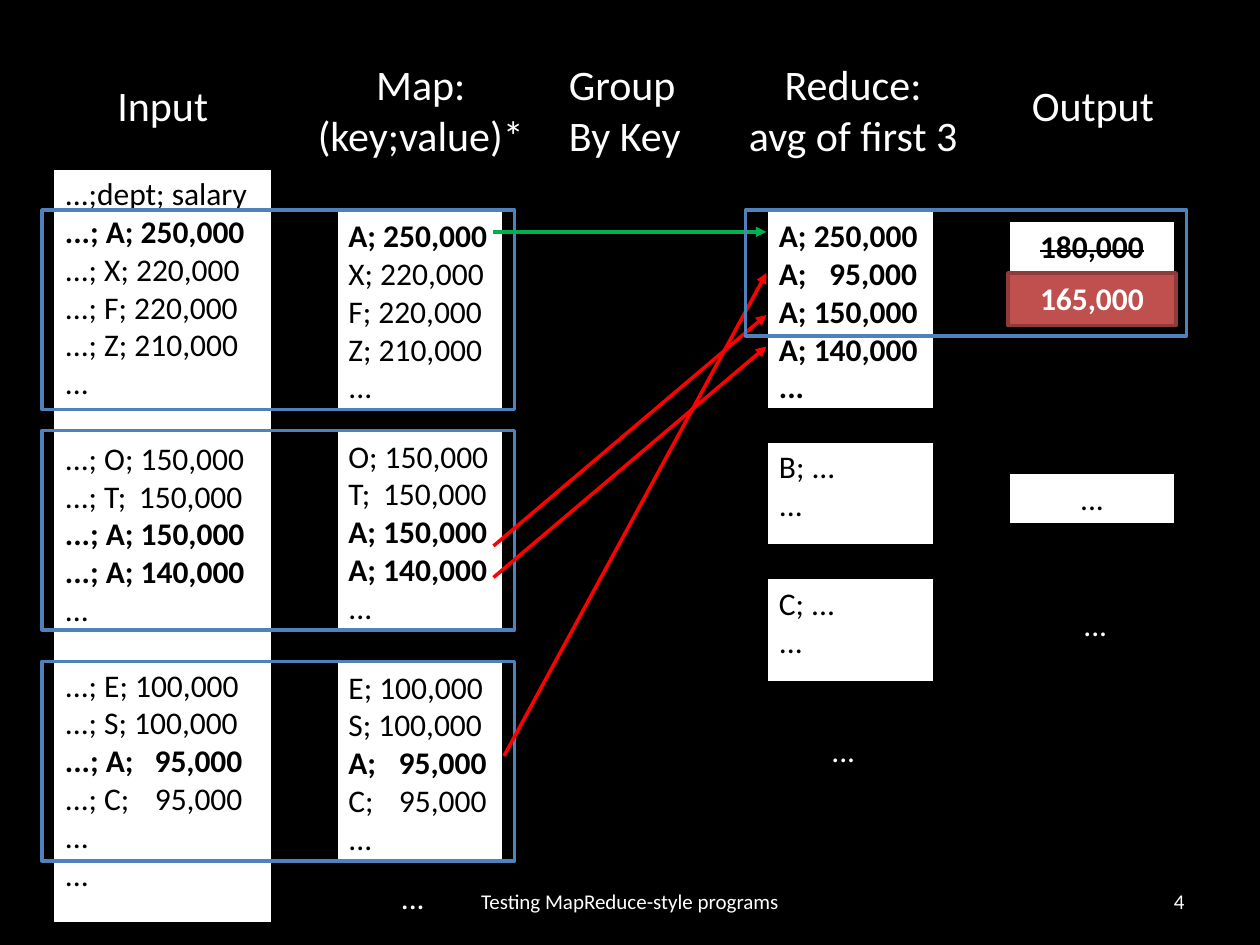
from lxml.etree import SubElement
from pptx import Presentation
from pptx.dml.color import RGBColor
from pptx.enum.shapes import MSO_CONNECTOR, MSO_SHAPE
from pptx.enum.text import MSO_ANCHOR, MSO_AUTO_SIZE, PP_ALIGN
from pptx.oxml.ns import qn
from pptx.util import Pt

COLORS = {
    "black": "000000", "white": "FFFFFF", "frame": "4F81BD",
    "kept": "00B050", "moved": "FF0000", "changed": "C0504D", "changed_edge": "8E3B39",
}
LEFT, CENTER, RIGHT = PP_ALIGN.LEFT, PP_ALIGN.CENTER, PP_ALIGN.RIGHT
LINE_HEIGHT = 21.6
BLOCK_TOPS = (120, 246, 378)
BLOCK_HEIGHT = 114

# A leading * marks a bold row; a tab right-aligns the amount.
MAP_BLOCKS = [
    ["*A; 250,000", "X; 220,000", "F; 220,000", "Z; 210,000", "..."],
    ["O; 150,000", "T;\t150,000", "*A; 150,000", "*A; 140,000", "..."],
    ["E; 100,000", "S; 100,000", "*A;\t95,000", "C;\t95,000", "..."],
]
REDUCE_BLOCKS = [
    (120, 114, ["*A; 250,000", "*A;\t95,000", "*A; 150,000", "*A; 140,000", "*..."]),
    (252, 60, ["B; ...", "..."]),
    (330, 60, ["C; ...", "..."]),
]
HEADINGS = [
    (60, 42, 67, ["Input"], [LEFT]),
    (174, 30, 133, ["Map:\v(key;value)*"], [CENTER]),
    (318, 30, 79, ["Group", "By Key"], [LEFT, CENTER]),
    (420, 30, 135, ["Reduce:\vavg of first 3"], [CENTER]),
    (582, 42, 85, ["Output"], [CENTER]),
]
ARROWS = [
    ((282, 132.5), (438, 132.5), "kept"),
    ((282, 330), (438, 198), "moved"),
    ((288, 432), (438, 156), "moved"),
    ((282, 312), (438, 180), "moved"),
]


def rgb(name):
    return RGBColor.from_string(COLORS[name])


def add_para(tf, first, text, color, size=18, align=LEFT, **font):
    """Add one paragraph, reusing the frame's own when it is the first."""
    p = tf.paragraphs[0] if first else tf.add_paragraph()
    p.alignment = align
    p.text = text
    for r in p.runs:
        style = {"name": "Calibri", "size": Pt(size), **font}
        for key, value in style.items():
            setattr(r.font, key, value)
        r.font.color.rgb = rgb(color)
    return p


def add_tab(p, position):
    tabs = SubElement(p._p.get_or_add_pPr(), qn("a:tabLst"))
    SubElement(tabs, qn("a:tab"), pos=str(Pt(position)), algn="r")


def add_rect(s, box, fill=None, line="black"):
    sp = s.shapes.add_shape(MSO_SHAPE.RECTANGLE, *map(Pt, box))
    sp.shadow.inherit = False
    if fill:
        sp.fill.solid()
        sp.fill.fore_color.rgb = rgb(fill)
    else:
        sp.fill.background()
    sp.line.color.rgb = rgb(line)
    sp.line.width = Pt(2)
    sp.text_frame.vertical_anchor = MSO_ANCHOR.TOP
    return sp


def add_records(s, box, blocks, tab):
    """White box of records, with one empty line's gap between blocks."""
    tf = add_rect(s, box, "white").text_frame
    for b, rows in enumerate(blocks):
        for i, row in enumerate(rows):
            p = add_para(tf, b == i == 0, row.replace("*", ""), "black",
                         bold=row.startswith("*"))
            if b and i == 0:
                p.space_before = Pt(LINE_HEIGHT)
            if "\t" in row:
                add_tab(p, tab)


def add_input(s, box):
    blocks = [[row if row == "..." else
               ("*" if row.startswith("*") else "") + "...; " + row.lstrip("*")
               for row in rows] for rows in MAP_BLOCKS]
    blocks[0].insert(0, "...;dept; salary")
    blocks[-1].append("...")
    add_records(s, box, blocks, tab=101.5)


def add_result(s, box, text, fill="white", line="black", color="black", **font):
    tf = add_rect(s, box, fill, line).text_frame
    return add_para(tf, True, text, color, align=CENTER, **font)


def add_output(s, x, y, w):
    """Old result struck out, new one below it, then the other groups."""
    h = 30
    p = add_result(s, (x, y, w, h), "180,000", bold=True)
    p.runs[0].font._element.set("strike", "sngStrike")
    add_result(s, (x, y + h, w, h), "165,000", "changed", "changed_edge", "white", bold=True)
    add_result(s, (x, y + 144, w, h), "...")
    add_label(s, (x + 36, y + 216, 28, 29), ["..."])


def add_label(s, box, lines, aligns=(LEFT,), size=18):
    tf = s.shapes.add_textbox(*map(Pt, box)).text_frame
    tf.word_wrap = False
    tf.auto_size = MSO_AUTO_SIZE.SHAPE_TO_FIT_TEXT
    for i, (text, align) in enumerate(zip(lines, aligns)):
        add_para(tf, i == 0, text, "white", size, align)


def add_arrow(s, start, end, color):
    c = s.shapes.add_connector(MSO_CONNECTOR.STRAIGHT, *map(Pt, start + end))
    c.line.color.rgb = rgb(color)
    c.line.width = Pt(2)
    SubElement(c.line._get_or_add_ln(), qn("a:tailEnd"), type="triangle")
    SubElement(c._element.spPr, qn("a:effectLst"))


def add_footer(s, y, h):
    for x, w, text, align in ((246, 228, "Testing MapReduce-style programs", CENTER),
                              (516, 168, "4", RIGHT)):
        tf = s.shapes.add_textbox(*map(Pt, (x, y, w, h))).text_frame
        tf.word_wrap = True
        tf.vertical_anchor = MSO_ANCHOR.MIDDLE
        add_para(tf, True, text, "white", 12, align)


def main():
    prs = Presentation()
    prs.slide_width, prs.slide_height = Pt(720), Pt(540)
    s = prs.slides.add_slide(prs.slide_layouts[6])
    s.background.fill.solid()
    s.background.fill.fore_color.rgb = rgb("black")

    add_input(s, (30, 96, 126, 432))
    add_footer(s, 500.5, 28.75)
    for y, rows in zip(BLOCK_TOPS, MAP_BLOCKS):
        add_records(s, (192, y, 96, BLOCK_HEIGHT), [rows], tab=79)
    for y, h, rows in REDUCE_BLOCKS:
        add_records(s, (438, y, 96, h), [rows], tab=79)
    for y in BLOCK_TOPS:
        add_rect(s, (24, y, 270, BLOCK_HEIGHT), line="frame")
    for start, end, color in ARROWS:
        add_arrow(s, start, end, color)
    add_output(s, 576, 126, 96)
    for x, y in ((222, 498), (468, 414)):
        add_label(s, (x, y, 28, 29), ["..."])
    add_rect(s, (426, 120, 252, 72), line="frame")
    for x, y, w, lines, aligns in HEADINGS:
        add_label(s, (x, y, w, 36.5 if y == 42 else 65.5), lines, aligns, 24)

    prs.save("out.pptx")


if __name__ == "__main__":
    main()
